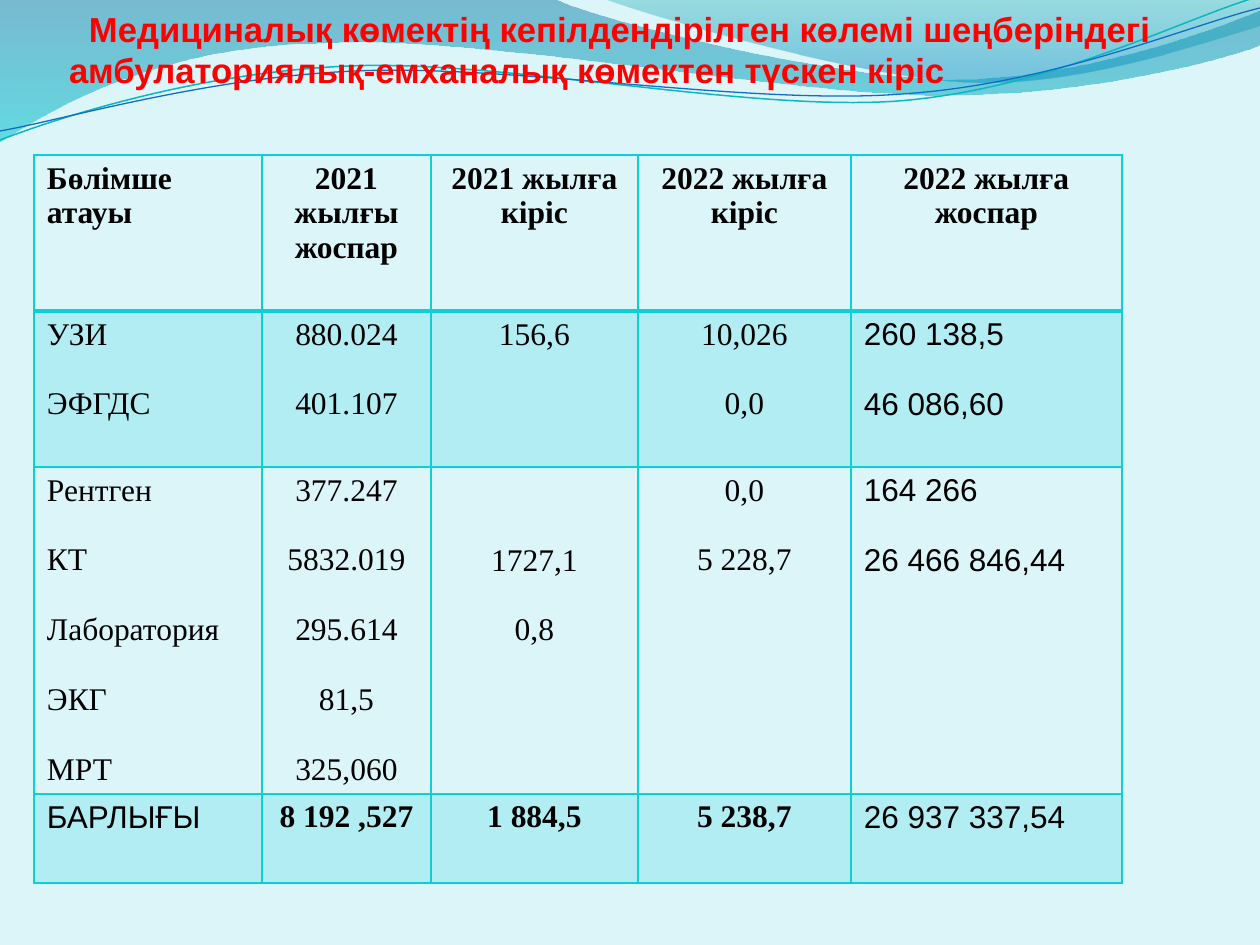
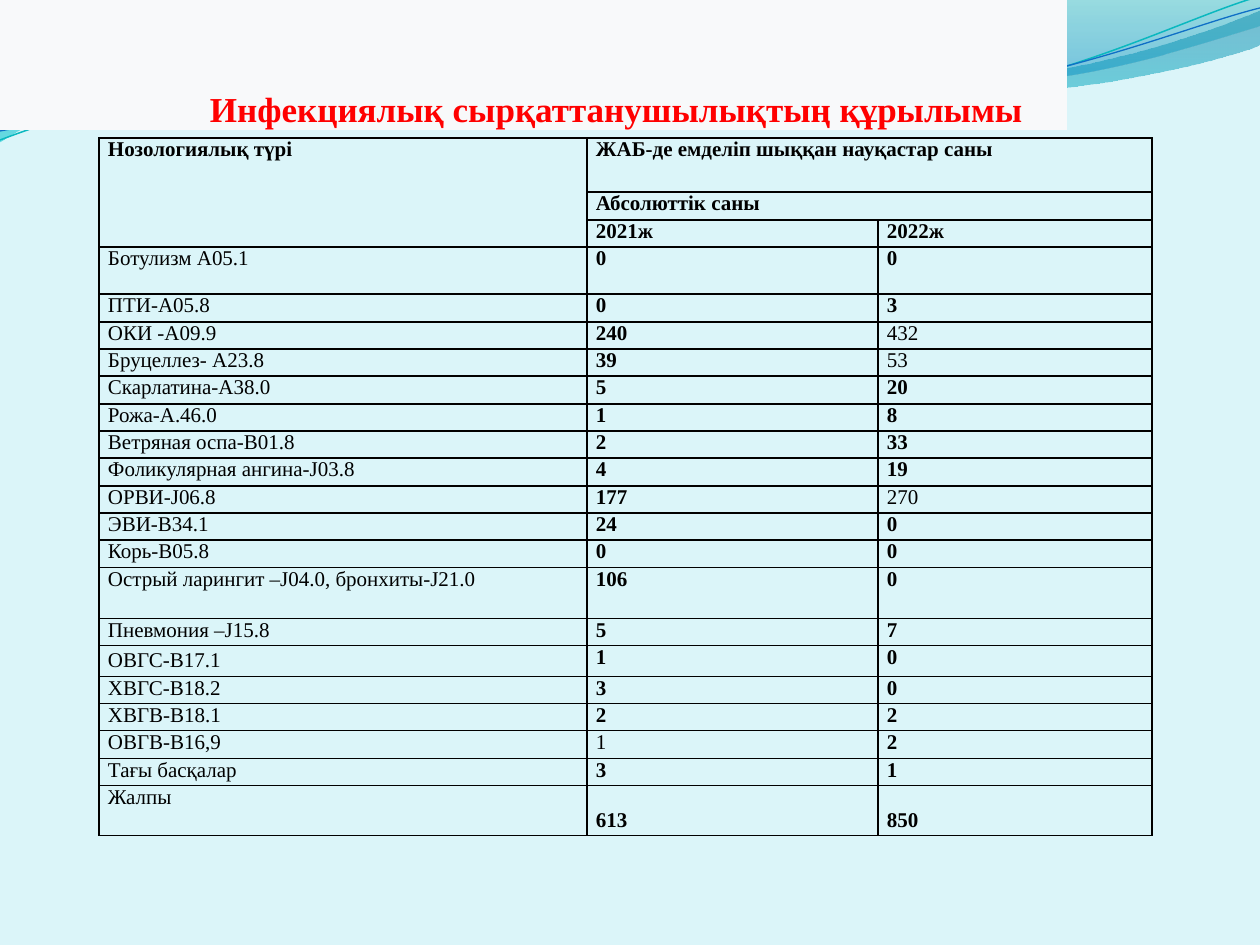
from lxml import etree
from pptx import Presentation
from pptx.dml.color import RGBColor
from pptx.enum.text import MSO_ANCHOR, MSO_AUTO_SIZE, PP_ALIGN
from pptx.oxml.ns import qn
from pptx.util import Pt

EMU_PER_PX = 914400 / 126
LEFT, CENTER = PP_ALIGN.LEFT, PP_ALIGN.CENTER
BOTTOM = MSO_ANCHOR.BOTTOM
NO_AUTOFIT = MSO_AUTO_SIZE.NONE
TITLE_ONLY = 5

SANS, SERIF = "Arial", "Times New Roman"
PAGE, PANEL = "DBF5F9", "F8F9FA"
RED, BLACK, TURQUOISE = "FF0000", "000000", "0BD0D9"

# Outlines in px: a pair is a line to a point, six numbers are a Bézier curve.
BANDS = [
    ([(0, 0), (554, -1), (600, 21, 837, 79, 955, 79), (1075, 79, 1207, 33, 1260, 11),
      (1261, 45), (1239, 55, 1096, 96, 940, 95), (784, 95, 481, 35, 324, 43),
      (163, 45, 58, 105, -1, 142)],
     [(0, "0074A1", 45), (1, "00C6CF", 55)]),
    ([(604, -1), (641, 14, 859, 78, 969, 82), (1079, 87, 1211, 40, 1260, 26), (1260, 0)],
     [(0, "00A1A9", 30), (0.8, "008BBF", 45)]),
]
WAVES = [
    ([(0, 140), (60, 117, 199, 72, 349, 66), (498, 59, 747, 112, 898, 101),
      (1050, 89, 1182, 19, 1257, -3)], "0AB8BF", 0.85),
    ([(0, 131), (59, 121, 207, 77, 357, 71), (508, 64, 752, 106, 903, 94),
      (1053, 84, 1187, 26, 1260, 8)], "0F6FC6", 0.75),
]

INCOME_COLUMNS = [228, 169, 207, 213, 271]
INCOME_HEIGHTS = [156, 156, 327, 89]
INCOME_ROWS = [
    ["Бөлімше атауы", "2021 жылғы жоспар", "2021 жылға кіріс", "2022 жылға кіріс",
     "2022 жылға жоспар"],
    ["УЗИ\nЭФГДС", "880.024\n401.107", "156,6", "10,026\n0,0", "260 138,5\n46 086,60"],
    ["Рентген\nКТ\nЛаборатория\nЭКГ\nМРТ", "377.247\n5832.019\n295.614\n81,5\n325,060",
     "\n1727,1\n0,8", "0,0\n5 228,7", "164 266\n26 466 846,44"],
    ["БАРЛЫҒЫ", "8 192 ,527", "1 884,5", "5 238,7", "26 937 337,54"],
]

DISEASE_COLUMNS = [488, 291, 274]
DISEASE_ROWS = [
    ["Нозологиялық түрі", "ЖАБ-де емделіп шыққан науқастар саны", ""],
    ["", "Абсолюттік саны", ""],
    ["", "2021ж", "2022ж"],
    ["Ботулизм А05.1", "0", "0"],
    ["ПТИ-А05.8", "0", "3"],
    ["ОКИ -А09.9", "240", "432"],
    ["Бруцеллез- А23.8", "39", "53"],
    ["Скарлатина-А38.0", "5", "20"],
    ["Рожа-А.46.0", "1", "8"],
    ["Ветряная оспа-В01.8", "2", "33"],
    ["Фоликулярная ангина-J03.8", "4", "19"],
    ["ОРВИ-J06.8", "177", "270"],
    ["ЭВИ-B34.1", "24", "0"],
    ["Корь-B05.8", "0", "0"],
    ["Острый ларингит –J04.0, бронхиты-J21.0", "106", "0"],
    ["Пневмония –J15.8", "5", "7"],
    ["ОВГС-B17.1", "1", "0"],
    ["ХВГС-B18.2", "3", "0"],
    ["ХВГВ-B18.1", "2", "2"],
    ["ОВГВ-B16,9", "1", "2"],
    ["Тағы басқалар", "3", "1"],
    ["Жалпы", "\n613", "\n850"],
]
DISEASE_TALL_ROWS = {0: 54, 3: 47, 14: 51, 16: 31, 21: 50}
DISEASE_HEIGHTS = [DISEASE_TALL_ROWS.get(i, 28 if i % 3 == 1 else 27)
                   for i in range(len(DISEASE_ROWS))]
DISEASE_HEADER_ROWS = 3
DISEASE_PLAIN_COUNTS = {(5, 2), (6, 2), (11, 2), (19, 1)}


def px(length):
    return round(length * EMU_PER_PX)


def colour(hex_code):
    return RGBColor.from_string(hex_code)


def set_all(target, values):
    for name, value in values.items():
        setattr(target, name, value)


def format_span(span, size, font=SERIF, bold=False, hex_code=BLACK):
    set_all(span.font, {"size": Pt(size), "name": font, "bold": bold})
    span.font.color.rgb = colour(hex_code)


def add_alpha(colour_element, percent):
    etree.SubElement(colour_element, qn("a:alpha"), val=str(percent * 1000))


def add_outline(page, outline, close):
    """Build a freeform through all points, then bend each curve's three lines into one."""
    points = [(px(x), px(y)) for part in outline for x, y in zip(part[::2], part[1::2])]
    builder = page.shapes.build_freeform(*points[0], scale=1.0)
    builder.add_line_segments(points[1:], close=close)
    shape = builder.convert_to_shape()
    shape.shadow.inherit = False
    lines = iter(shape.element.xpath(".//a:path/a:lnTo"))
    for part in outline[1:]:
        pieces = [next(lines) for _ in range(len(part) // 2)]
        if len(pieces) == 3:
            curve = etree.Element(qn("a:cubicBezTo"))
            pieces[0].addprevious(curve)
            for piece in pieces:
                curve.append(piece[0])
                piece.getparent().remove(piece)
    return shape


def add_band(page, outline, stops):
    band = add_outline(page, outline, True)
    band.line.fill.background()
    band.fill.gradient()
    band.fill.gradient_angle = 270
    for stop, (position, hex_code, _) in zip(band.fill.gradient_stops, stops):
        stop.position = position
        stop.color.rgb = colour(hex_code)
    for element, (_, _, opacity) in zip(band.element.xpath(".//a:gs/a:srgbClr"), stops):
        add_alpha(element, opacity)
    return band


def add_wave(page, outline, hex_code, width):
    wave = add_outline(page, outline, False)
    wave.fill.background()
    wave.line.color.rgb = colour(hex_code)
    wave.line.width = Pt(width)
    return wave


def decorate_layout(layout, page):
    """Draw the shared backdrop on a page, then move it to the layout."""
    layout.background.fill.solid()
    layout.background.fill.fore_color.rgb = colour(PAGE)
    for holder in list(layout.placeholders)[1:]:
        layout.shapes.element.remove(holder.element)
    backdrop = [add_band(page, *band) for band in BANDS]
    backdrop += [add_wave(page, *wave) for wave in WAVES]
    for shape in backdrop:
        layout.shapes.element.append(shape.element)


def place_title(page, box, text, size, font, margin_left=0, margin_bottom=0, indent=0):
    title = page.shapes.title
    set_all(title, dict(zip(("left", "top", "width", "height"), map(px, box))))
    frame = title.text_frame
    set_all(frame, {"auto_size": NO_AUTOFIT, "word_wrap": True, "vertical_anchor": BOTTOM,
                    "margin_left": px(margin_left), "margin_right": 0, "margin_top": 0,
                    "margin_bottom": px(margin_bottom)})
    para = frame.paragraphs[0]
    para.alignment = LEFT
    para._p.get_or_add_pPr().set("indent", str(px(indent)))
    span = para.add_run()
    span.text = text
    format_span(span, size, font, True, RED)
    return title


def add_borders(cell, hex_code, widths):
    """Set the left, right, top and bottom borders, widths in points."""
    properties = cell._tc.get_or_add_tcPr()
    for index, (side, width) in enumerate(zip("LRTB", widths)):
        line = etree.Element(qn(f"a:ln{side}"), w=str(Pt(width)))
        fill = etree.SubElement(line, qn("a:solidFill"))
        etree.SubElement(fill, qn("a:srgbClr"), val=hex_code)
        properties.insert(index, line)


def fill_cell(cell, text, style, align, margins, gap, skip):
    """Write one entry per line; each leading line break lowers the text by skip px."""
    entries = text.lstrip("\n").split("\n")
    drop = skip * (len(text) - len(text.lstrip("\n")))
    side, top = margins
    set_all(cell, {"margin_left": px(side), "margin_right": px(side),
                   "margin_top": px(top + drop), "margin_bottom": px(top)})
    for index, entry in enumerate(entries):
        para = cell.text_frame.add_paragraph() if index else cell.text_frame.paragraphs[0]
        para.alignment = align
        if index:
            para.space_before = Pt(gap)
        span = para.add_run()
        span.text = entry
        format_span(span, **style)


def add_grid(page, left, top, columns, heights):
    frame = page.shapes.add_table(len(heights), len(columns), px(left), px(top),
                                  px(sum(columns)), px(sum(heights)))
    table = frame.table
    set_all(table, {"first_row": False, "horz_banding": False})
    for column, width in zip(table.columns, columns):
        column.width = px(width)
    for row, height in zip(table.rows, heights):
        row.height = px(height)
    return table


def add_income_table(page, left, top):
    table = add_grid(page, left, top, INCOME_COLUMNS, INCOME_HEIGHTS)
    total, last = len(INCOME_ROWS) - 1, len(INCOME_COLUMNS) - 1
    for i, row in enumerate(INCOME_ROWS):
        for j, text in enumerate(row):
            cell = table.cell(i, j)
            sans = (j == last and i > 0) or (i, j) == (total, 0)
            style = {"size": 18, "font": SANS if sans else SERIF,
                     "bold": i == 0 or (i == total and not sans)}
            align = LEFT if sans or j == 0 else CENTER
            fill_cell(cell, text, style, align, (13, 6), gap=20, skip=70)
            if i % 2:
                cell.fill.solid()
                cell.fill.fore_color.rgb = colour(TURQUOISE)
                add_alpha(cell._tc.xpath("./a:tcPr/a:solidFill/a:srgbClr")[0], 20)
            else:
                cell.fill.background()
            add_borders(cell, TURQUOISE, (1, 1, 2 if i == 1 else 1, 2 if i == 0 else 1))


def add_disease_table(page, left, top):
    table = add_grid(page, left, top, DISEASE_COLUMNS, DISEASE_HEIGHTS)
    for start, end in [((0, 0), (2, 0)), ((0, 1), (0, 2)), ((1, 1), (1, 2))]:
        table.cell(*start).merge(table.cell(*end))
    for i, row in enumerate(DISEASE_ROWS):
        for j, text in enumerate(row):
            cell = table.cell(i, j)
            bold = i < DISEASE_HEADER_ROWS or (j > 0 and (i, j) not in DISEASE_PLAIN_COUNTS)
            if not cell.is_spanned:
                fill_cell(cell, text, {"size": 12, "bold": bold}, LEFT, (9, 0),
                          gap=0, skip=23)
            if text == "ОВГС-B17.1":
                cell.text_frame.paragraphs[0].line_spacing = 1.15
            cell.fill.background()
            add_borders(cell, BLACK, (1, 1, 1, 1))


def build_income_page(page):
    place_title(page, (69, 39, 1103, 126),
                "Медициналық көмектің кепілдендірілген көлемі шеңберіндегі "
                "амбулаториялық-емханалық көмектен түскен кіріс",
                19.8, SANS, margin_bottom=74, indent=20)
    add_income_table(page, 34, 155)


def build_disease_page(page):
    title = place_title(page, (0, 0, 1067, 130), "Инфекциялық сырқаттанушылықтың құрылымы",
                        20, SERIF, margin_left=210)
    title.fill.solid()
    title.fill.fore_color.rgb = colour(PANEL)
    add_disease_table(page, 99, 138)


def main():
    deck = Presentation()
    set_all(deck, {"slide_width": px(1260), "slide_height": px(945)})
    layout = deck.slide_layouts[TITLE_ONLY]
    income_page = deck.slides.add_slide(layout)
    decorate_layout(layout, income_page)
    build_income_page(income_page)
    build_disease_page(deck.slides.add_slide(layout))
    deck.save("out.pptx")


if __name__ == "__main__":
    main()
